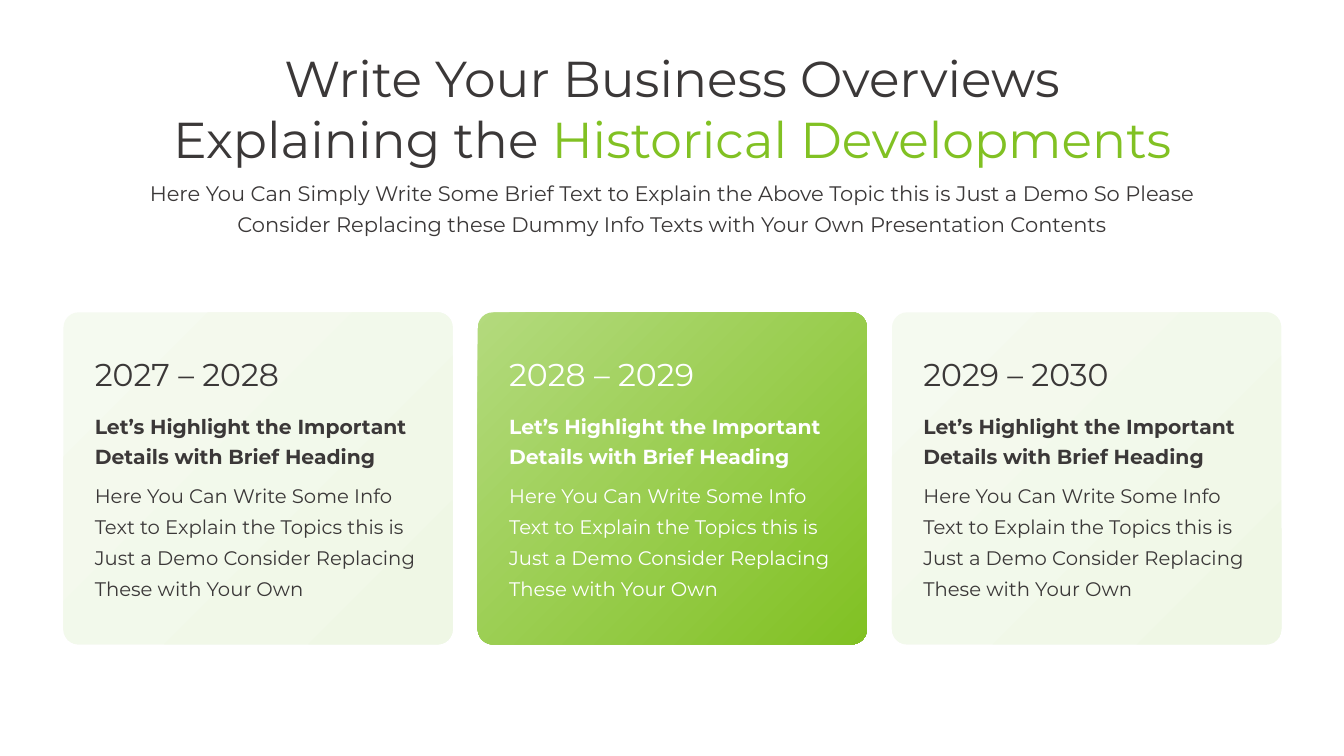
from dataclasses import dataclass

from lxml.etree import SubElement
from pptx import Presentation
from pptx.dml.color import RGBColor
from pptx.enum.shapes import MSO_SHAPE
from pptx.enum.text import MSO_AUTO_SIZE, PP_ALIGN
from pptx.oxml.ns import qn
from pptx.util import Cm, Pt


@dataclass(frozen=True)
class Theme:
    font: str = "Montserrat"
    dark: str = "3B3838"
    white: str = "FFFFFF"
    green: tuple = ("81C123", "B3DA7D")
    pale: tuple = ("EFF7E5", "F5FAF0")
    title: float = 36
    subtitle: float = 15
    years: float = 22.5
    heading: float = 14.5
    body: float = 14


class SlideBuilder:
    def __init__(self, slide, theme):
        self.slide = slide
        self.theme = theme

    def gradient(self, fill, colors):
        fill.gradient()
        for stop, color, position in zip(fill.gradient_stops, colors, (0, 1)):
            stop.color.rgb = RGBColor.from_string(color)
            stop.position = position

    def text(self, shapes, box, content, size, color, spacing=None, bold=False,
             align=PP_ALIGN.LEFT):
        shape = shapes.add_textbox(*(Cm(length) for length in box))
        frame = shape.text_frame
        frame.text = content
        frame.word_wrap = False
        frame.auto_size = MSO_AUTO_SIZE.SHAPE_TO_FIT_TEXT
        for paragraph in frame.paragraphs:
            paragraph.alignment = align
            if spacing:
                paragraph.line_spacing = Pt(spacing)
            for run in paragraph.runs:
                self.style(run, size, color, bold)
        return frame

    def style(self, run, size, color, bold=False):
        run.font.name = self.theme.font
        run.font.size = Pt(size)
        run.font.bold = bold
        run.font.color.rgb = RGBColor.from_string(color)

    def title(self, content, highlight):
        theme = self.theme
        frame = self.text(self.slide.shapes, (2.82, 1.07, 28.24, 3.33), content,
                          theme.title, theme.dark, align=PP_ALIGN.CENTER)
        run = frame.paragraphs[-1].add_run()
        run.text = highlight
        self.style(run, theme.title, theme.green[0])
        self.gradient(run.font.fill, theme.green)
        run.font.fill.gradient_angle = 180

    def subtitle(self, content):
        self.text(self.slide.shapes, (3.15, 4.29, 27.58, 1.75), content,
                  self.theme.subtitle, self.theme.dark, 22, align=PP_ALIGN.CENTER)

    def panel(self, shapes, left, colors):
        shape = shapes.add_shape(MSO_SHAPE.ROUNDED_RECTANGLE,
                                 Cm(left), Cm(7.87), Cm(9.81), Cm(8.37))
        shape.adjustments[0] = 0.046
        shape.shadow.inherit = False
        shape.line.fill.background()
        self.gradient(shape.fill, colors)
        gradient = shape._element.spPr.find(qn("a:gradFill"))
        gradient.remove(gradient.find(qn("a:lin")))
        radial = SubElement(gradient, qn("a:path"), {"path": "circle"})
        SubElement(radial, qn("a:fillToRect"), {"l": "100000", "t": "100000"})

    def card(self, left, years, heading, body, colors, text_color):
        theme = self.theme
        shapes = self.slide.shapes.add_group_shape().shapes
        self.panel(shapes, left, colors)
        text_left = left + 0.54
        self.text(shapes, (text_left, 10.19, 8.71, 1.7), heading,
                  theme.heading, text_color, 21, bold=True)
        self.text(shapes, (text_left, 8.81, 5.45, 1.22), years,
                  theme.years, text_color)
        self.text(shapes, (text_left, 11.89, 8.71, 3.33), body,
                  theme.body, text_color, 22)


HEADING = "Let’s Highlight the Important\vDetails with Brief Heading"
BODY = "\n".join((
    "Here You Can Write Some Info",
    "Text to Explain the Topics this is",
    "Just a Demo Consider Replacing",
    "These with Your Own",
))


def main():
    presentation = Presentation()
    presentation.slide_width = Cm(33.87)
    presentation.slide_height = Cm(19.05)
    slide = presentation.slides.add_slide(presentation.slide_layouts[6])
    theme = Theme()
    builder = SlideBuilder(slide, theme)

    builder.title("Write Your Business Overviews\nExplaining the ",
                  "Historical Developments")
    builder.subtitle(
        "Here You Can Simply Write Some Brief Text to Explain the Above Topic "
        "this is Just a Demo So Please\n"
        "Consider Replacing these Dummy Info Texts with Your Own Presentation Contents")

    cards = (
        ("2027 – 2028", theme.pale, theme.dark),
        ("2028 – 2029", theme.green, theme.white),
        ("2029 – 2030", theme.pale, theme.dark),
    )
    for index, (years, colors, text_color) in enumerate(cards):
        builder.card(1.6 + index * 10.44, years, HEADING, BODY, colors, text_color)

    presentation.save("out.pptx")


if __name__ == "__main__":
    main()
